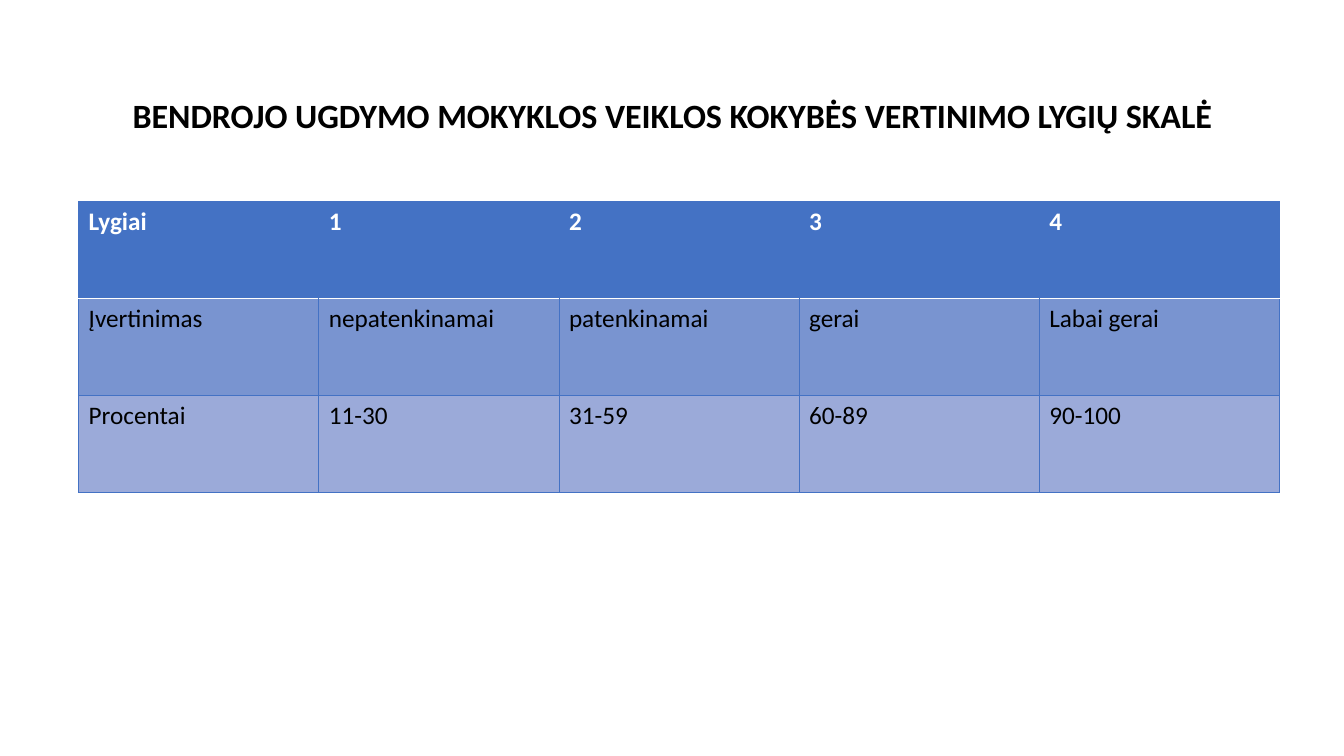
from lxml.etree import SubElement
from pptx import Presentation
from pptx.dml.color import RGBColor
from pptx.enum.text import MSO_ANCHOR, PP_ALIGN
from pptx.oxml.ns import qn
from pptx.util import Inches, Pt

COLORS = {
    "text": "000000",
    "header_text": "FFFFFF",
    "header": "4472C4",
    "rating": "7994D0",
    "percent": "9BAAD9",
    "border": "4472C4",
    "divider": "FFFFFF",
}
TITLE = "BENDROJO UGDYMO MOKYKLOS VEIKLOS KOKYBĖS VERTINIMO LYGIŲ SKALĖ"
SCALE = [
    ("header", ["Lygiai", "1", "2", "3", "4"]),
    ("rating", ["Įvertinimas", "nepatenkinamai", "patenkinamai", "gerai", "Labai gerai"]),
    ("percent", ["Procentai", "11-30", "31-59", "60-89", "90-100"]),
]


class ScaleSlide:
    """Holds the slide and its style; positions are in inches."""

    font = "Calibri"

    def __init__(self, presentation):
        self.slide = presentation.slides.add_slide(presentation.slide_layouts[5])

    def add_run(self, paragraph, text, size, color, bold):
        run = paragraph.add_run()
        run.text = text
        run.font.name = self.font
        run.font.size = Pt(size)
        run.font.bold = bold
        run.font.color.rgb = RGBColor.from_string(COLORS[color])

    def add_title(self, text, left, top, width, height):
        title = self.slide.shapes.title
        title.left, title.top = Inches(left), Inches(top)
        title.width, title.height = Inches(width), Inches(height)
        title.text_frame.word_wrap = True
        title.text_frame.vertical_anchor = MSO_ANCHOR.TOP
        heading = title.text_frame.paragraphs[0]
        heading.alignment = PP_ALIGN.CENTER
        heading.line_spacing = 0.9
        self.add_run(heading, text, 24.3, "text", True)

    def set_borders(self, cell, borders):
        """Draw the sides L, R, T and B, each given as (color, points) or None."""
        properties = cell._tc.get_or_add_tcPr()
        for position, side in enumerate("LRTB"):
            line = SubElement(properties, qn(f"a:ln{side}"))
            properties.insert(position, line)
            if borders[side] is None:
                SubElement(line, qn("a:noFill"))
                continue
            color, points = borders[side]
            line.set("w", str(Pt(points)))
            SubElement(SubElement(line, qn("a:solidFill")), qn("a:srgbClr")).set("val", COLORS[color])

    def add_scale(self, rows, left, top, width, height):
        last = len(rows[0][1]) - 1
        table = self.slide.shapes.add_table(
            len(rows), last + 1, Inches(left), Inches(top), Inches(width), Inches(height)
        ).table
        thin, divider = ("border", 0.5), ("divider", 1)
        for row, (level, texts) in enumerate(rows):
            is_header = level == "header"
            for column, text in enumerate(texts):
                cell = table.cell(row, column)
                cell.fill.solid()
                cell.fill.fore_color.rgb = RGBColor.from_string(COLORS[level])
                color = "header_text" if is_header else "text"
                self.add_run(cell.text_frame.paragraphs[0], text, 18, color, is_header)
                self.set_borders(cell, {
                    "L": None if is_header and column > 0 else thin,
                    "R": None if is_header and column < last else thin,
                    "T": divider if row == 1 else thin,
                    "B": divider if is_header else thin,
                })


def main():
    presentation = Presentation()
    presentation.slide_width, presentation.slide_height = Inches(13.33), Inches(7.5)
    scale_slide = ScaleSlide(presentation)
    scale_slide.add_title(TITLE, 0.92, 0.93, 11.5, 1.07)
    scale_slide.add_scale(SCALE, 0.78, 2, 11.91, 2.89)
    presentation.save("out.pptx")


if __name__ == "__main__":
    main()
